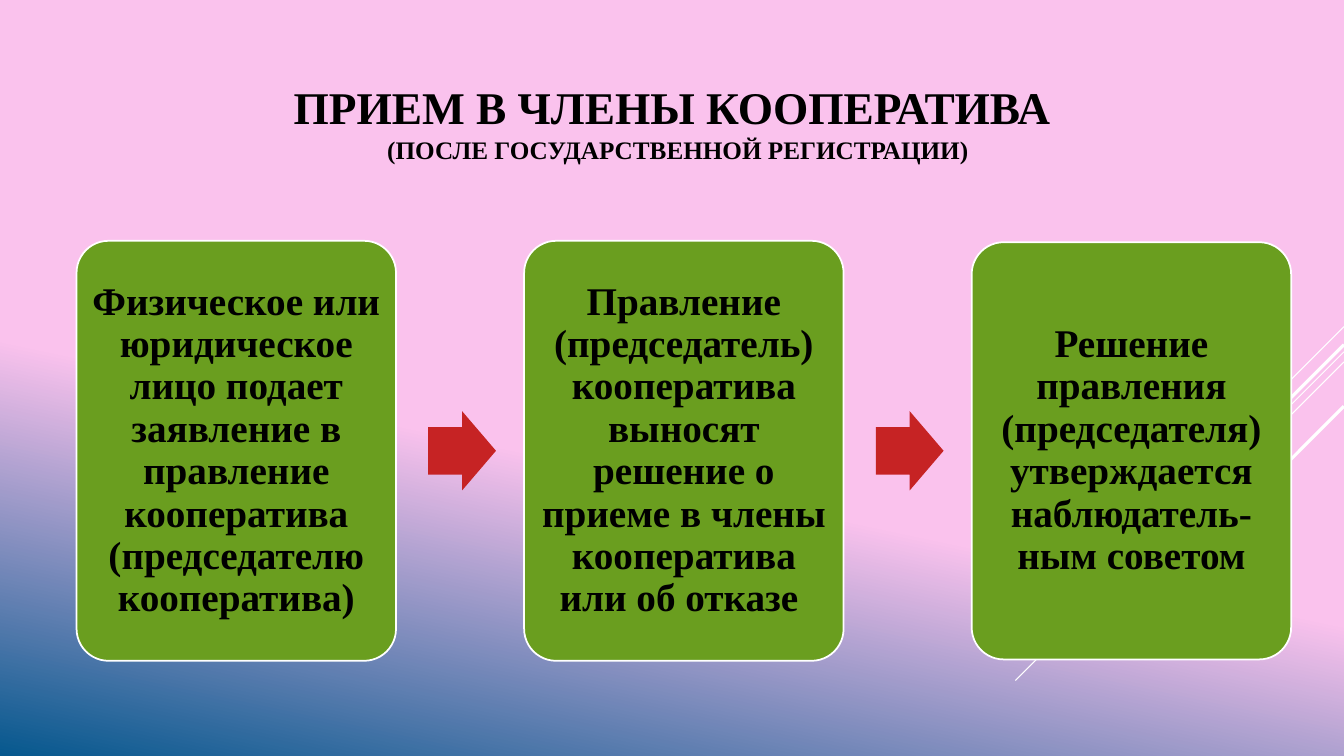
from lxml.etree import SubElement
from pptx import Presentation
from pptx.dml.color import RGBColor
from pptx.enum.shapes import MSO_CONNECTOR as Connector, MSO_SHAPE as Shape
from pptx.enum.text import MSO_ANCHOR as Anchor, MSO_AUTO_SIZE as AutoSize, PP_ALIGN as Align
from pptx.oxml.ns import qn
from pptx.util import Pt

HEADING = "ПРИЕМ В ЧЛЕНЫ КООПЕРАТИВА "
SUBHEADING = "(ПОСЛЕ ГОСУДАРСТВЕННОЙ РЕГИСТРАЦИИ)"
STEPS = [
    ("Физическое или юридическое лицо подает заявление в правление "
     "кооператива (председателю кооператива)", 300),
    ("Правление (председатель) кооператива выносят решение о приеме "
     "в члены кооператива или об отказе ", 300),
    ("Решение правления (председателя) утверждается наблюдатель-ным советом", 298),
]
RAYS = [
    (233.3, 72, 0.75),
    (251.3, 234.7, 0.75),
    (258.5, 149.4, 0.75),
    (246.2, 137.5, 2.25),
    (290.2, 100.1, 2.25),
]
PINK, BLUE, GREEN, RED, WHITE, BLACK = "FAC2ED", "06588E", "6A9E1F", "C62324", "FFFFFF", "000000"
FONT = "Times New Roman"
SLIDE_W, SLIDE_H = 960, 540
STEP_LEFT, STEP_PITCH, STEP_W, MIDDLE = 54.7, 319.7, 228.2, 322
ARROW_OFFSET, ARROW_W, ARROW_H = 251.2, 48.4, 56.6


def color(value):
    return RGBColor.from_string(value)


def write(paragraph, text, size, fill=BLACK, bold=True, align=Align.CENTER, spacing=1.0):
    paragraph.alignment = align
    paragraph.line_spacing = spacing
    run = paragraph.add_run()
    run.text = text
    run.font.name = FONT
    run.font.size = Pt(size)
    run.font.bold = bold
    run.font.color.rgb = color(fill)


def set_frame(frame, inset):
    frame.word_wrap = True
    frame.auto_size = AutoSize.NONE
    frame.vertical_anchor = Anchor.MIDDLE
    frame.margin_left = frame.margin_right = Pt(inset)
    frame.margin_top = frame.margin_bottom = Pt(inset)


def add_block(slide, kind, left, width, height, fill, adjustments):
    block = slide.shapes.add_shape(
        kind, Pt(left), Pt(MIDDLE - height / 2), Pt(width), Pt(height))
    block.shadow.inherit = False
    block.fill.solid()
    block.fill.fore_color.rgb = color(fill)
    for index, value in enumerate(adjustments):
        block.adjustments[index] = value
    return block


def add_background(slide):
    fill = slide.background.fill
    fill.gradient()
    fill.gradient_angle = 258
    for stop, (position, value) in zip(fill.gradient_stops, [(0.6, PINK), (1, BLUE)]):
        stop.position = position
        stop.color.rgb = color(value)


def add_rays(slide):
    for top, reach, weight in RAYS:
        ray = slide.shapes.add_connector(
            Connector.STRAIGHT, Pt(SLIDE_W), Pt(top), Pt(SLIDE_W - reach), Pt(top + reach))
        ray.line.color.rgb = color(WHITE)
        ray.line.width = Pt(weight)
        SubElement(ray.element.spPr, qn("a:effectLst"))


def add_heading(slide):
    title = slide.shapes.title
    title.left, title.top, title.width, title.height = Pt(101.5), Pt(54), Pt(765.4), Pt(66.2)
    set_frame(title.text_frame, 4)
    line = title.text_frame.paragraphs[0]
    write(line, HEADING, size=32.4)
    line.add_line_break()
    write(line, SUBHEADING, size=18)


def add_steps(slide):
    for index, (wording, height) in enumerate(STEPS):
        left = STEP_LEFT + index * STEP_PITCH
        step = add_block(slide, Shape.ROUNDED_RECTANGLE, left, STEP_W, height, GREEN, [0.1])
        step.line.color.rgb = color(WHITE)
        step.line.width = Pt(1.25)
        set_frame(step.text_frame, 2)
        write(step.text_frame.paragraphs[0], wording, size=28, spacing=0.9)
        if index < len(STEPS) - 1:
            arrow = add_block(slide, Shape.RIGHT_ARROW, left + ARROW_OFFSET,
                              ARROW_W, ARROW_H, RED, [0.6, 0.5])
            arrow.line.fill.background()


def main():
    deck = Presentation()
    deck.slide_width, deck.slide_height = Pt(SLIDE_W), Pt(SLIDE_H)
    slide = deck.slides.add_slide(deck.slide_layouts[5])
    add_background(slide)
    add_rays(slide)
    add_heading(slide)
    add_steps(slide)
    deck.save("out.pptx")


if __name__ == "__main__":
    main()
